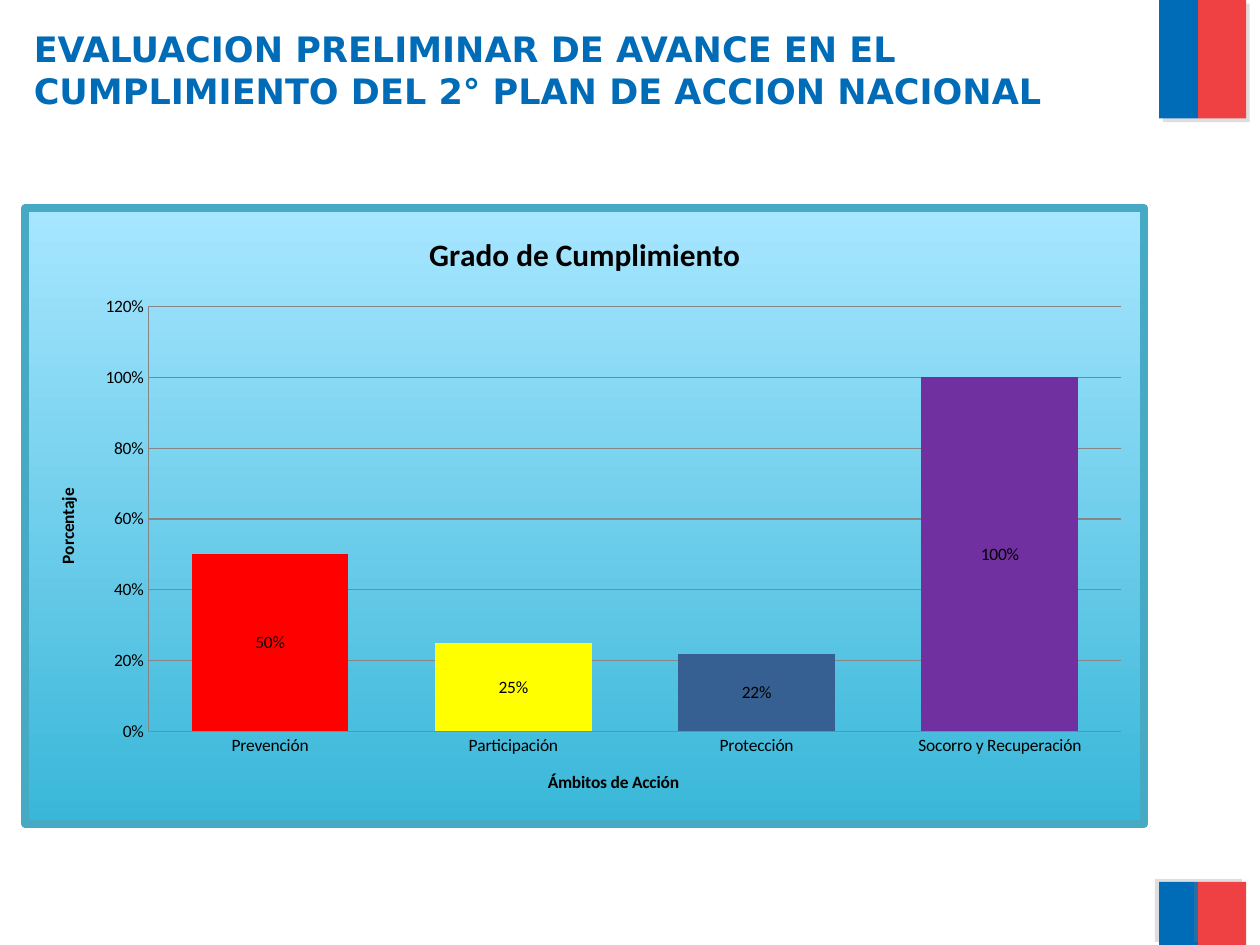
"""Build the slide on progress of the second national action plan."""
from typing import NamedTuple

import pptx
import pptx.chart.data
import pptx.dml.color
import pptx.enum.chart
import pptx.enum.shapes
import pptx.oxml
import pptx.oxml.ns
import pptx.util
from pptx.util import Inches

BLUE, RED, BLACK, GRID = "006CB7", "EF4144", "000000", "868686"
NS = pptx.oxml.ns.nsdecls("a", "c")


class Band(NamedTuple):
    left: float
    top: float
    width: float
    height: float
    color: str
    shadow_angle: int


class Bar(NamedTuple):
    name: str
    value: float
    color: str


BANDS = [
    Band(left, top, width, height, color, angle)
    for top, height, angle in ((0, 0.94, 45), (7, 0.5, 215))
    for left, width, color in ((9.2, 0.31, BLUE), (9.51, 0.38, RED))
]
BARS = [
    Bar("Prevención", 0.5, "FF0000"),
    Bar("Participación", 0.25, "FFFF00"),
    Bar("Protección", 0.22, "376092"),
    Bar("Socorro y Recuperación", 1, "7030A0"),
]


def rgb(color: str) -> pptx.dml.color.RGBColor:
    return pptx.dml.color.RGBColor.from_string(color)


def set_format(obj, values: dict) -> None:
    for name, value in values.items():
        setattr(obj, name, value)


def set_font(font, size: float, name: str, color: str, bold: bool) -> None:
    set_format(font, {"size": pptx.util.Pt(size), "name": name, "bold": bold})
    font.color.rgb = rgb(color)


def fill_solid(fill, color: str) -> None:
    fill.solid()
    fill.fore_color.rgb = rgb(color)


def add_band(s, band: Band) -> None:
    box = (Inches(v) for v in band[:4])
    sp = s.shapes.add_shape(pptx.enum.shapes.MSO_SHAPE.RECTANGLE, *box)
    fill_solid(sp.fill, band.color)
    sp.line.fill.background()
    sp.shadow.inherit = False
    effects = sp._element.spPr.find(pptx.oxml.ns.qn("a:effectLst"))
    effects.append(pptx.oxml.parse_xml(
        f'<a:outerShdw {NS} blurRad="0" dist="38100" dir="{band.shadow_angle * 60000}"'
        ' algn="ctr" rotWithShape="0"><a:srgbClr val="808080">'
        '<a:alpha val="25000"/></a:srgbClr></a:outerShdw>'))


def add_title(s, text: str) -> None:
    tf = s.shapes.add_textbox(
        Inches(0.17), Inches(0.17), Inches(8.93), Inches(1.25)).text_frame
    tf.word_wrap = True
    r = tf.paragraphs[0].add_run()
    r.text = text
    set_font(r.font, 20, "DejaVu Sans", BLUE, True)


def set_chart_title(owner, text: str, size: float) -> None:
    tf = owner.text_frame
    tf.text = text
    set_font(tf.paragraphs[0].runs[0].font, size, "Calibri", BLACK, True)


def format_axis(axis, title: str, values: dict) -> None:
    none = pptx.enum.chart.XL_TICK_MARK.NONE
    set_format(axis, {"major_tick_mark": none, "minor_tick_mark": none, **values})
    axis.format.line.color.rgb = rgb(GRID)
    set_chart_title(axis.axis_title, title, 10)


def style_chart_area(chart) -> None:
    space = chart._chartSpace
    space.find(pptx.oxml.ns.qn("c:chart")).addnext(pptx.oxml.parse_xml(
        f'<c:spPr {NS}><a:gradFill><a:gsLst>'
        '<a:gs pos="0"><a:srgbClr val="39B7D8"/></a:gs>'
        '<a:gs pos="100000"><a:srgbClr val="A7E6FF"/></a:gs></a:gsLst>'
        '<a:lin ang="16200000" scaled="0"/></a:gradFill>'
        '<a:ln w="57150"><a:solidFill><a:srgbClr val="46AAC5"/></a:solidFill>'
        '<a:round/></a:ln></c:spPr>'))
    area = space.chart.plotArea
    for old in area.findall(pptx.oxml.ns.qn("c:layout")):
        area.remove(old)
    sizes = {"x": 0.11, "y": 0.16, "w": 0.87, "h": 0.69}
    places = "".join(f'<c:{k} val="{v}"/>' for k, v in sizes.items())
    area.insert(0, pptx.oxml.parse_xml(
        f'<c:layout {NS}><c:manualLayout><c:layoutTarget val="inner"/>'
        f'<c:xMode val="edge"/><c:yMode val="edge"/>{places}'
        '</c:manualLayout></c:layout>'))


def add_progress_chart(s, bars: list[Bar]) -> None:
    data = pptx.chart.data.CategoryChartData(number_format="0%")
    data.categories = [bar.name for bar in bars]
    data.add_series("Series 1", [bar.value for bar in bars])
    chart = s.shapes.add_chart(
        pptx.enum.chart.XL_CHART_TYPE.COLUMN_STACKED,
        Inches(0.17), Inches(1.62), Inches(8.94), Inches(4.95), data).chart
    chart.has_legend = False
    set_font(chart.font, 10, "Calibri", BLACK, False)
    set_chart_title(chart.chart_title, "Grado de Cumplimiento", 18)
    format_axis(chart.category_axis, "Ámbitos de Acción", {})
    format_axis(chart.value_axis, "Porcentaje", {
        "minimum_scale": 0, "maximum_scale": 1.2, "major_unit": 0.2,
        "has_major_gridlines": True})
    chart.value_axis.major_gridlines.format.line.color.rgb = rgb(GRID)
    set_format(chart.value_axis.tick_labels,
               {"number_format": "0%", "number_format_is_linked": False})
    plot = chart.plots[0]
    set_format(plot, {"gap_width": 55, "overlap": 100,
                      "vary_by_categories": False, "has_data_labels": True})
    set_format(plot.data_labels, {
        "show_value": True, "number_format": "0%", "number_format_is_linked": False,
        "position": pptx.enum.chart.XL_LABEL_POSITION.CENTER})
    series = plot.series[0]
    fill_solid(series.format.fill, "4F81BD")
    for i, bar in enumerate(bars):
        fill_solid(series.points[i].format.fill, bar.color)
    style_chart_area(chart)


def main() -> None:
    prs = pptx.Presentation()
    set_format(prs, {"slide_width": Inches(10), "slide_height": Inches(7.5)})
    s = prs.slides.add_slide(prs.slide_layouts[6])
    for band in BANDS:
        add_band(s, band)
    add_title(s, "EVALUACION PRELIMINAR DE AVANCE EN EL "
                 "CUMPLIMIENTO DEL 2° PLAN DE ACCION NACIONAL")
    add_progress_chart(s, BARS)
    prs.save("out.pptx")


if __name__ == "__main__":
    main()
